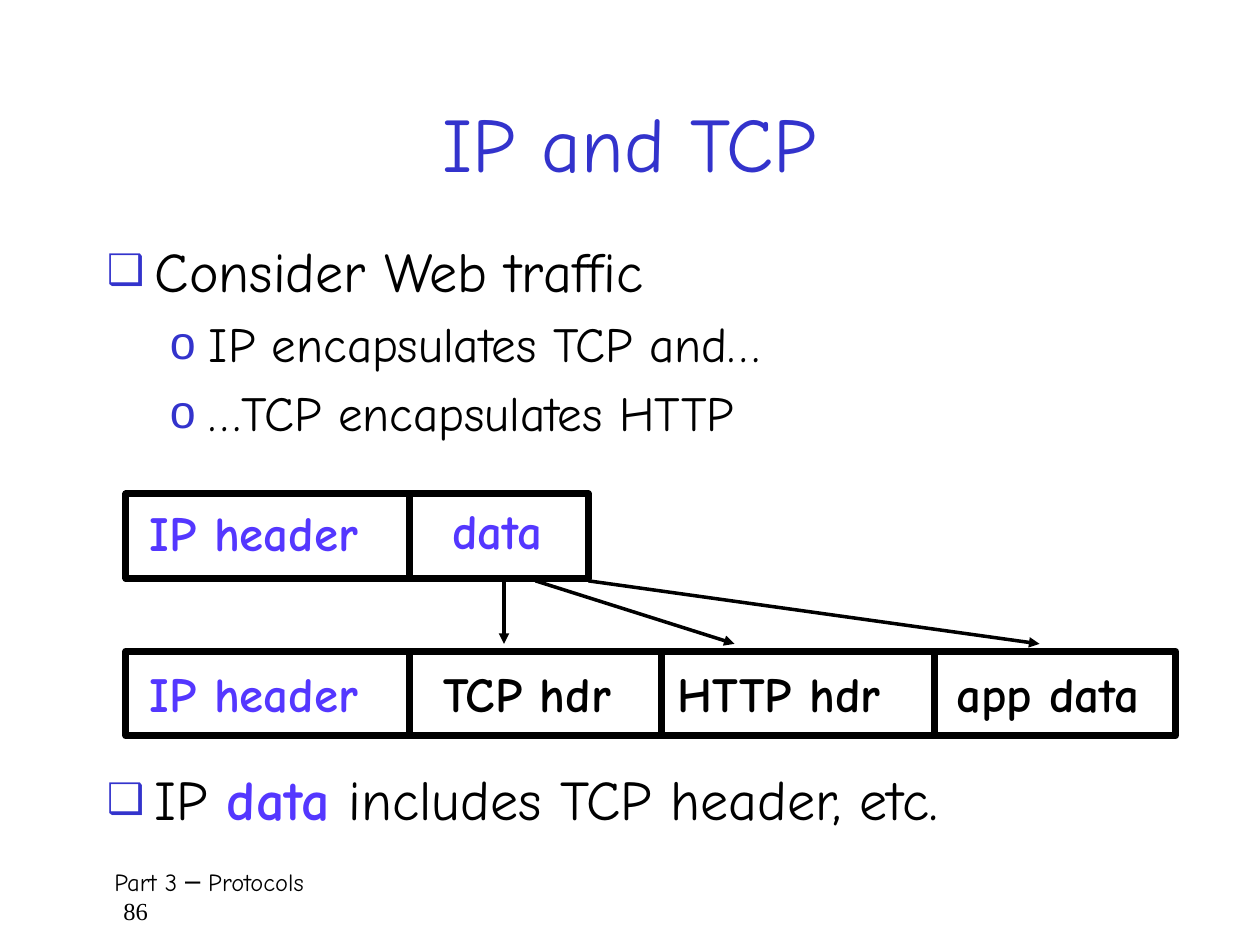
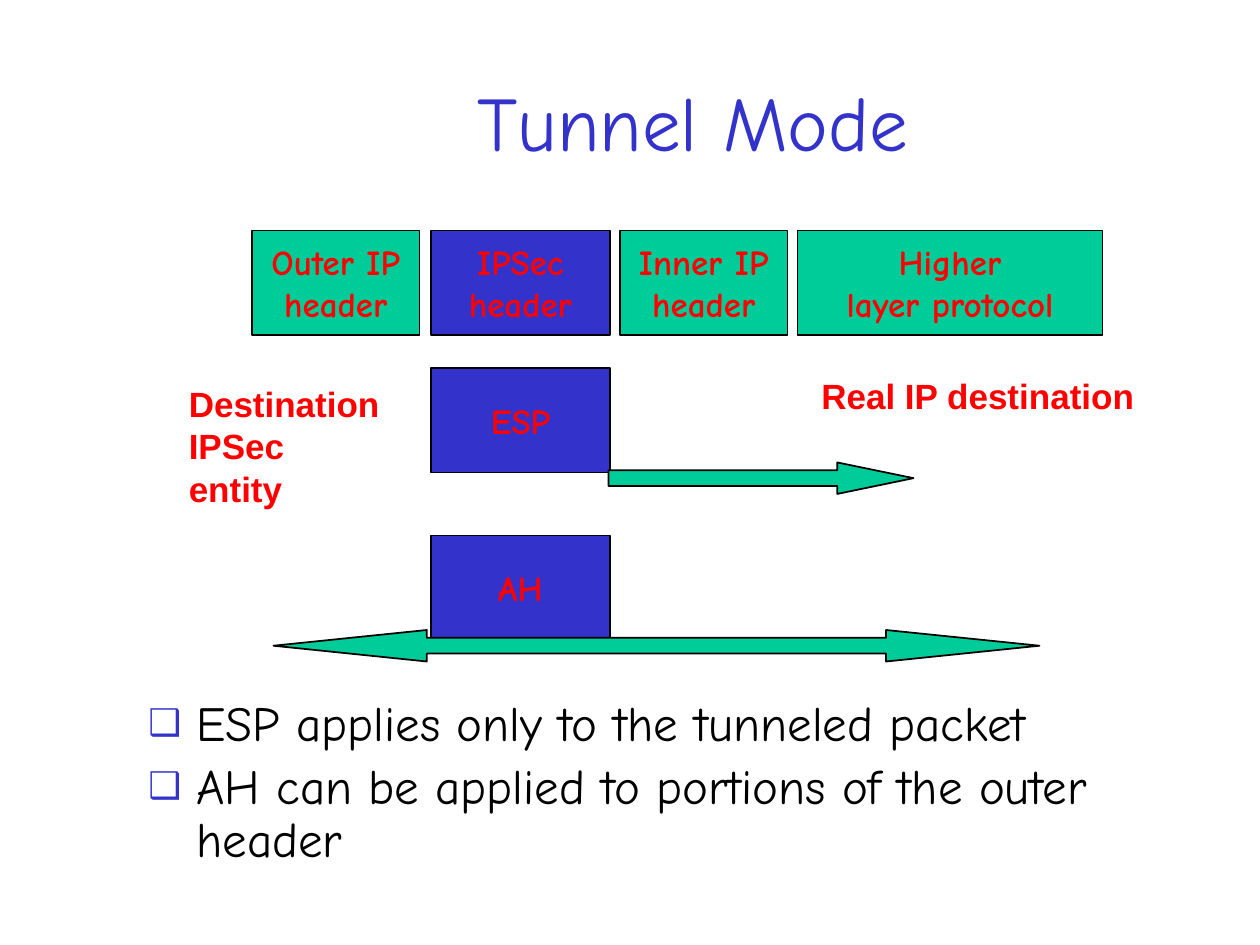
from lxml.etree import SubElement
from pptx import Presentation
from pptx.dml.color import RGBColor
from pptx.enum.shapes import MSO_CONNECTOR, MSO_SHAPE
from pptx.enum.text import MSO_ANCHOR, PP_ALIGN
from pptx.oxml.ns import qn
from pptx.util import Inches, Pt

BLUE, VIOLET, GREEN, RED, BLACK = "3333CC", "5437FF", "00CC99", "FF0000", "000000"
BODY_FONT = "Comic Neue"
BULLETS = {0: ("❑", 75, 0.38, 0.38), 1: ("o", 95, 0.81, 0.31)}


def color(hex_string):
    """Turn a hex string into a colour."""
    return RGBColor.from_string(hex_string)


class Deck:
    """Hold the shared style and the current slide."""

    def __init__(self):
        """Start an empty 10 by 7.5 inch presentation."""
        self.presentation = Presentation()
        self.presentation.slide_width = Inches(10)
        self.presentation.slide_height = Inches(7.5)
        self.slide = None

    def add_slide(self, title, left, top):
        """Start a blank slide with a centred title."""
        self.slide = self.presentation.slides.add_slide(self.presentation.slide_layouts[6])
        frame = self.text_frame(left, top, 8.5, 1.25)
        frame.vertical_anchor = MSO_ANCHOR.MIDDLE
        self.set_lines(frame, [title], 44, BLUE, align=PP_ALIGN.CENTER)

    def text_frame(self, left, top, width, height, wrap=True):
        """Add a text box and return its frame."""
        box = self.slide.shapes.add_textbox(
            Inches(left), Inches(top), Inches(width), Inches(height))
        box.text_frame.word_wrap = wrap
        return box.text_frame

    def style(self, font, size, hex_string, bold=False, name=BODY_FONT):
        """Set the look of a run or paragraph font."""
        font.name, font.size, font.bold = name, Pt(size), bold
        font.color.rgb = color(hex_string)

    def set_lines(self, frame, lines, size, hex_string, bold=False, name=BODY_FONT,
                  align=PP_ALIGN.LEFT):
        """Fill a frame with one paragraph per line."""
        frame.text = "\n".join(lines)
        for paragraph in frame.paragraphs:
            paragraph.alignment = align
            self.style(paragraph.font, size, hex_string, bold, name)

    def label(self, lines, left, top, width, height, size, hex_string, name=BODY_FONT):
        """Add a bold label that does not wrap."""
        frame = self.text_frame(left, top, width, height, wrap=False)
        self.set_lines(frame, lines, size, hex_string, True, name)

    def indent(self, paragraph, margin, hanging=0):
        """Indent a paragraph and return its properties."""
        properties = paragraph._p.get_or_add_pPr()
        properties.set("marL", str(Inches(margin)))
        properties.set("indent", str(-Inches(hanging)))
        return properties

    def bullets(self, items, left, top, width, height, spacing=None):
        """Add bulleted items given as level, size and (text, emphasised) parts."""
        frame = self.text_frame(left, top, width, height)
        for index, (level, size, parts) in enumerate(items):
            paragraph = frame.paragraphs[0] if index == 0 else frame.add_paragraph()
            paragraph.level = level
            paragraph.space_before = Pt(size * 0.2)
            paragraph.line_spacing = spacing
            for text, emphasised in parts:
                run = paragraph.add_run()
                run.text = text
                self.style(run.font, size, VIOLET if emphasised else BLACK, emphasised)
            symbol, percent, margin, hanging = BULLETS[level]
            properties = self.indent(paragraph, margin, hanging)
            bullet_color = SubElement(properties, qn("a:buClr"))
            SubElement(bullet_color, qn("a:srgbClr"), val=BLUE)
            SubElement(properties, qn("a:buSzPct"), val=str(percent * 1000))
            SubElement(properties, qn("a:buFont"), typeface="Arial")
            SubElement(properties, qn("a:buChar"), char=symbol)

    def footer(self, section, number):
        """Add the section name with the page number below it."""
        frame = self.text_frame(0.75, 6.83, 8.58, 0.5)
        self.set_lines(frame, [section, number], 14, BLACK)
        section_line, number_line = frame.paragraphs
        number_line.font.name = "Times New Roman"
        self.indent(section_line, 0.06)
        self.indent(number_line, 0.13)

    def shape(self, kind, left, top, width, height, fill=None, weight=1, lines=()):
        """Add an outlined shape with optional fill and red centred text."""
        shape = self.slide.shapes.add_shape(
            kind, Inches(left), Inches(top), Inches(width), Inches(height))
        shape.shadow.inherit = False
        if fill:
            shape.fill.solid()
            shape.fill.fore_color.rgb = color(fill)
        else:
            shape.fill.background()
        shape.line.color.rgb = color(BLACK)
        shape.line.width = Pt(weight)
        if lines:
            shape.text_frame.word_wrap = False
            shape.text_frame.vertical_anchor = MSO_ANCHOR.MIDDLE
            self.set_lines(shape.text_frame, lines, 20, RED, True, align=PP_ALIGN.CENTER)
        return shape

    def line(self, start, end, weight, arrow=False):
        """Add a straight black line between two points."""
        line = self.slide.shapes.add_connector(
            MSO_CONNECTOR.STRAIGHT, *(Inches(value) for value in (*start, *end)))
        line.line.color.rgb = color(BLACK)
        line.line.width = Pt(weight)
        if arrow:
            SubElement(line.line._get_or_add_ln(), qn("a:tailEnd"), type="triangle")
        SubElement(line._element.spPr, qn("a:effectLst"))

    def packet(self, top, width, dividers, fields):
        """Add a packet bar with dividers and labelled fields."""
        self.shape(MSO_SHAPE.RECTANGLE, 1, top, width, 0.67, weight=4)
        for x in dividers:
            self.line((x, top + 0.02), (x, top + 0.69), 4)
        for text, left, label_top, label_width, hex_string in fields:
            self.label([text], left, label_top, label_width, 0.64, 28, hex_string)


def build_ip_and_tcp(deck):
    """Build the slide on encapsulation."""
    deck.add_slide("IP and TCP", 0.75, 0.5)
    deck.footer("Part 3 ─ Protocols", "86")
    deck.bullets([
        (0, 32, [("Consider Web traffic", False)]),
        (1, 28, [("IP encapsulates TCP and…", False)]),
        (1, 28, [("…TCP encapsulates HTTP", False)]),
    ], 0.75, 1.83, 8.42, 2.08)
    deck.packet(5.17, 8.33, (3.25, 5.25, 7.42), [
        ("IP header", 1.09, 5.22, 2.08, VIOLET),
        ("TCP hdr", 3.42, 5.22, 1.73, BLACK),
        ("HTTP hdr", 5.28, 5.22, 2.06, BLACK),
        ("app data", 7.49, 5.22, 1.85, BLACK),
    ])
    deck.packet(3.92, 3.67, (3.25,), [
        ("IP header", 1.09, 3.94, 2.08, VIOLET),
        ("data", 3.49, 3.92, 1.05, VIOLET),
    ])
    for data_x, field_x in ((4, 4), (4.25, 5.83), (4.67, 8.25)):
        deck.line((data_x, 4.61), (field_x, 5.11), 2, arrow=True)
    deck.bullets([
        (0, 32, [("IP ", False), ("data", True), (" includes TCP header, etc.", False)]),
    ], 0.75, 6.08, 8.33, 0.75, spacing=0.9)


def build_tunnel_mode(deck):
    """Build the slide on tunnel mode."""
    deck.add_slide("Tunnel Mode", 1.25, 0.33)
    deck.bullets([
        (0, 28, [("ESP applies only to the tunneled packet", False)]),
        (0, 28, [("AH can be applied to portions of the outer header", False)]),
    ], 1.08, 5.5, 8.5, 1.75, spacing=0.9)
    for lines, left, top, width, fill in (
        (["Outer IP", "header"], 2, 1.83, 1.33, GREEN),
        (["Inner IP", "header"], 4.92, 1.83, 1.33, GREEN),
        (["IPSec", "header"], 3.42, 1.83, 1.42, BLUE),
        (["Higher", "layer protocol"], 6.33, 1.83, 2.42, GREEN),
        (["ESP"], 3.42, 2.92, 1.42, BLUE),
        (["AH"], 3.42, 4.25, 1.42, BLUE),
    ):
        deck.shape(MSO_SHAPE.RECTANGLE, left, top, width, 0.83, fill, lines=lines)
    esp_reach = deck.shape(MSO_SHAPE.RIGHT_ARROW, 4.83, 3.67, 2.42, 0.25, GREEN)
    esp_reach.adjustments[1] = 2.42
    ah_reach = deck.shape(MSO_SHAPE.LEFT_RIGHT_ARROW, 2.17, 5, 6.08, 0.25, GREEN)
    ah_reach.adjustments[1] = 4.87
    deck.label(["Real IP destination"], 6.42, 2.92, 2.7, 0.44, 20, RED, "Arial")
    deck.label(["Destination", "IPSec", "entity"], 1.4, 2.99, 1.73, 1.11, 20, RED, "Arial")


def main():
    """Build and save both slides."""
    deck = Deck()
    build_ip_and_tcp(deck)
    build_tunnel_mode(deck)
    deck.presentation.save("out.pptx")


if __name__ == "__main__":
    main()
